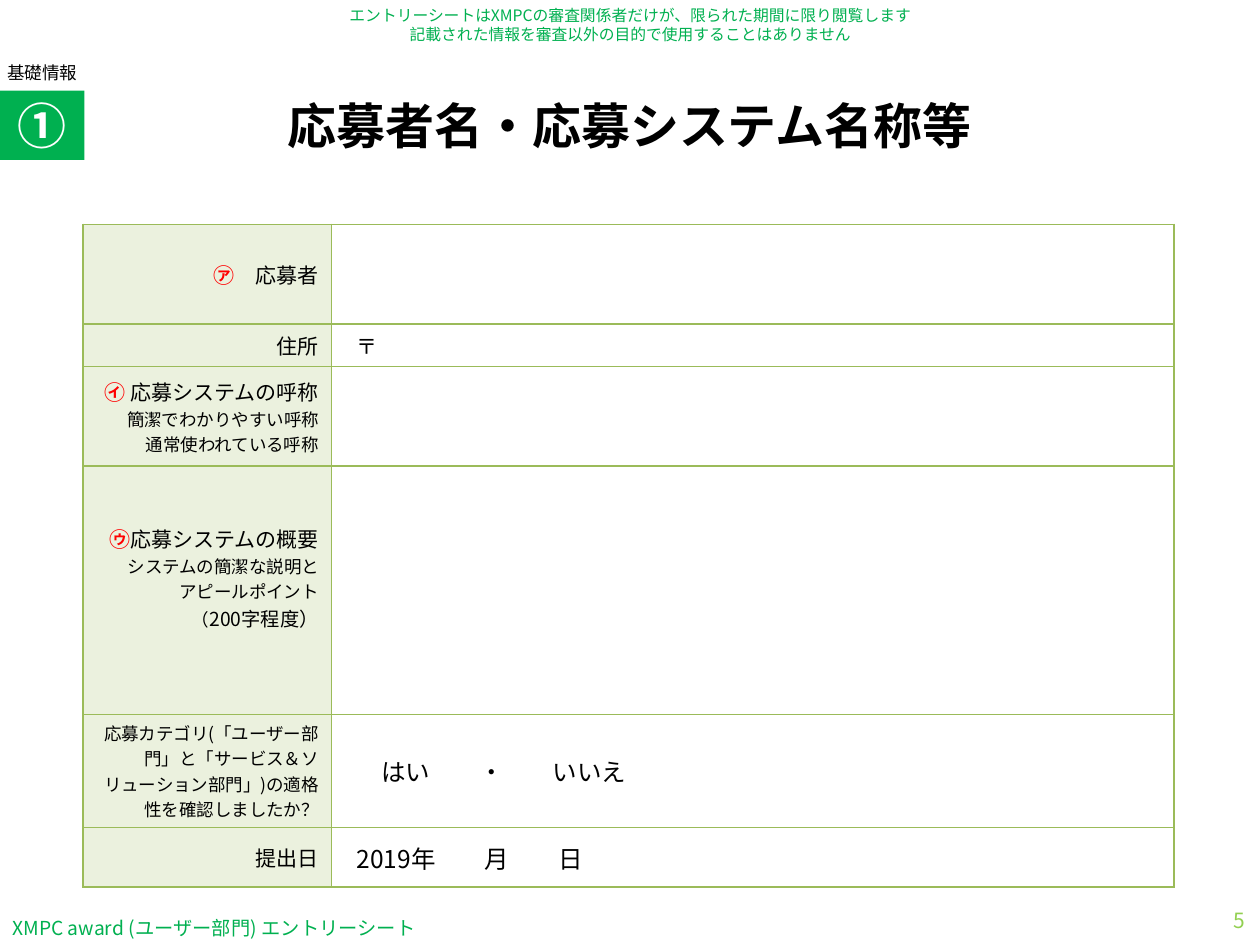
from dataclasses import dataclass

from lxml import etree
from pptx import Presentation
from pptx.dml.color import RGBColor
from pptx.enum.shapes import MSO_SHAPE
from pptx.enum.text import MSO_ANCHOR, PP_ALIGN
from pptx.oxml.ns import qn
from pptx.util import Inches, Pt

LEFT, CENTER, RIGHT = PP_ALIGN.LEFT, PP_ALIGN.CENTER, PP_ALIGN.RIGHT
TOP, MIDDLE = MSO_ANCHOR.TOP, MSO_ANCHOR.MIDDLE
RECTANGLE = MSO_SHAPE.RECTANGLE


@dataclass(frozen=True)
class Theme:
    font: str = "Noto Sans CJK JP"
    black: str = "000000"
    white: str = "FFFFFF"
    red: str = "FF0000"
    green: str = "00B050"
    page_green: str = "92D050"
    border: str = "9BBB59"
    label_fill: str = "EBF1DE"
    heading: int = 28
    answer: int = 14
    label: int = 12
    footer: int = 11
    detail: int = 10
    notice: int = 9


THEME = Theme()


@dataclass(frozen=True)
class Part:
    """A stretch of text in one style; a newline becomes a line break."""
    text: str
    size: int = THEME.label
    color: str = THEME.black
    bold: bool = False


def mark(text):
    return Part(text, color=THEME.red, bold=True)


def detail(text):
    return Part(text, THEME.detail)


def answer(text):
    return Part(text, THEME.answer)


LABEL_WIDTH, ANSWER_WIDTH = 1.97, 6.69
CELL_INSET, RAISED_INSET = 0.05, 0.25
# Row height, bottom inset of the label, label paragraphs, answer
ENTRY_ROWS = [
    (0.79, CELL_INSET, [[mark("㋐"), Part("　応募者")]], None),
    (0.34, CELL_INSET, [[Part("住所")]], Part("〒")),
    (0.79, CELL_INSET,
     [[mark("㋑ "), Part("応募システムの呼称\n"), detail("簡潔でわかりやすい呼称")],
      [detail("通常使われている呼称")]], None),
    (1.97, RAISED_INSET,
     [[mark("㋒"), Part("応募システムの概要\n"),
       detail("システムの簡潔な説明と\nアピールポイント\n（"),
       Part("200字程度）", THEME.footer)]], None),
    (0.9, CELL_INSET,
     [[detail("応募カテゴリ(「ユーザー部門」と「サービス＆ソリューション部門」)"
              "の適格性を確認しましたか？")]], answer("　はい　　・　　いいえ")),
    (0.47, CELL_INSET, [[Part("提出日")]], answer("2019年　　月　　日")),
]


def add_run(paragraph, text, part):
    run = paragraph.add_run()
    run.text = text
    font = run.font
    font.name, font.size, font.bold = THEME.font, Pt(part.size), part.bold
    font.color.rgb = RGBColor.from_string(part.color)
    east_asian = etree.SubElement(font._element, qn("a:ea"))
    east_asian.set("typeface", THEME.font)


def write(frame, paragraphs, align):
    for number, parts in enumerate(paragraphs):
        paragraph = frame.add_paragraph() if number else frame.paragraphs[0]
        paragraph.alignment = align
        for part in parts:
            for line_number, line in enumerate(part.text.split("\n")):
                if line_number:
                    paragraph.add_line_break()
                if line:
                    add_run(paragraph, line, part)


def add_text(slide, box, part, align=LEFT, anchor=MIDDLE, side_inset=0.1):
    frame = slide.shapes.add_textbox(*map(Inches, box)).text_frame
    frame.word_wrap = True
    frame.vertical_anchor = anchor
    frame.margin_left = frame.margin_right = Inches(side_inset)
    write(frame, [[part]], align)


def add_badge(slide, box, part):
    badge = slide.shapes.add_shape(RECTANGLE, *map(Inches, box))
    badge.shadow.inherit = False
    badge.fill.solid()
    badge.fill.fore_color.rgb = RGBColor.from_string(THEME.green)
    badge.line.fill.background()
    badge.text_frame.vertical_anchor = MIDDLE
    write(badge.text_frame, [[part]], CENTER)


def set_borders(cell):
    properties = cell._tc.get_or_add_tcPr()
    for position, side in enumerate(("lnL", "lnR", "lnT", "lnB")):
        line = etree.Element(qn(f"a:{side}"), w=str(Pt(1)))
        fill = etree.SubElement(line, qn("a:solidFill"))
        etree.SubElement(fill, qn("a:srgbClr"), val=THEME.border)
        properties.insert(position, line)


def format_cell(cell, side_inset, bottom_inset=CELL_INSET, fill=None):
    cell.vertical_anchor = MIDDLE
    cell.margin_left = cell.margin_right = Inches(side_inset)
    cell.margin_top, cell.margin_bottom = Inches(CELL_INSET), Inches(bottom_inset)
    if fill:
        cell.fill.solid()
        cell.fill.fore_color.rgb = RGBColor.from_string(fill)
    else:
        cell.fill.background()
    set_borders(cell)


def add_entry_table(slide, left, top):
    height = sum(row[0] for row in ENTRY_ROWS)
    table = slide.shapes.add_table(
        len(ENTRY_ROWS), 2, Inches(left), Inches(top),
        Inches(LABEL_WIDTH + ANSWER_WIDTH), Inches(height)).table
    table.first_row = table.horz_banding = False
    for column, width in zip(table.columns, (LABEL_WIDTH, ANSWER_WIDTH)):
        column.width = Inches(width)
    for index, (row_height, bottom_inset, label, reply) in enumerate(ENTRY_ROWS):
        table.rows[index].height = Inches(row_height)
        label_cell, answer_cell = table.cell(index, 0), table.cell(index, 1)
        format_cell(label_cell, 0.1, bottom_inset, THEME.label_fill)
        format_cell(answer_cell, 0.2)
        write(label_cell.text_frame, label, RIGHT)
        if reply:
            write(answer_cell.text_frame, [[reply]], LEFT)


def main():
    deck = Presentation()
    deck.slide_width, deck.slide_height = Inches(10), Inches(7.5)
    slide = deck.slides.add_slide(deck.slide_layouts[6])

    add_text(slide, (0, 7.23, 4, 0.27),
             Part("XMPC award (ユーザー部門) エントリーシート", THEME.footer, THEME.green))
    add_text(slide, (2.5, 0, 5, 0.39),
             Part("エントリーシートはXMPCの審査関係者だけが、限られた期間に限り閲覧します\n"
                  "記載された情報を審査以外の目的で使用することはありません",
                  THEME.notice, THEME.green), CENTER, TOP)
    add_entry_table(slide, 0.66, 1.78)
    add_badge(slide, (0, 0.72, 0.67, 0.55),
              Part("①", THEME.heading, THEME.white, bold=True))
    add_text(slide, (0, 0.44, 0.67, 0.21), detail("基礎情報"),
             CENTER, TOP, side_inset=0)
    add_text(slide, (0.27, 0.6, 9.45, 0.79),
             Part("応募者名・応募システム名称等", THEME.heading, bold=True), CENTER)
    add_text(slide, (9.25, 7.1, 0.73, 0.4),
             Part("5", color=THEME.page_green), RIGHT)

    deck.save("out.pptx")


if __name__ == "__main__":
    main()
